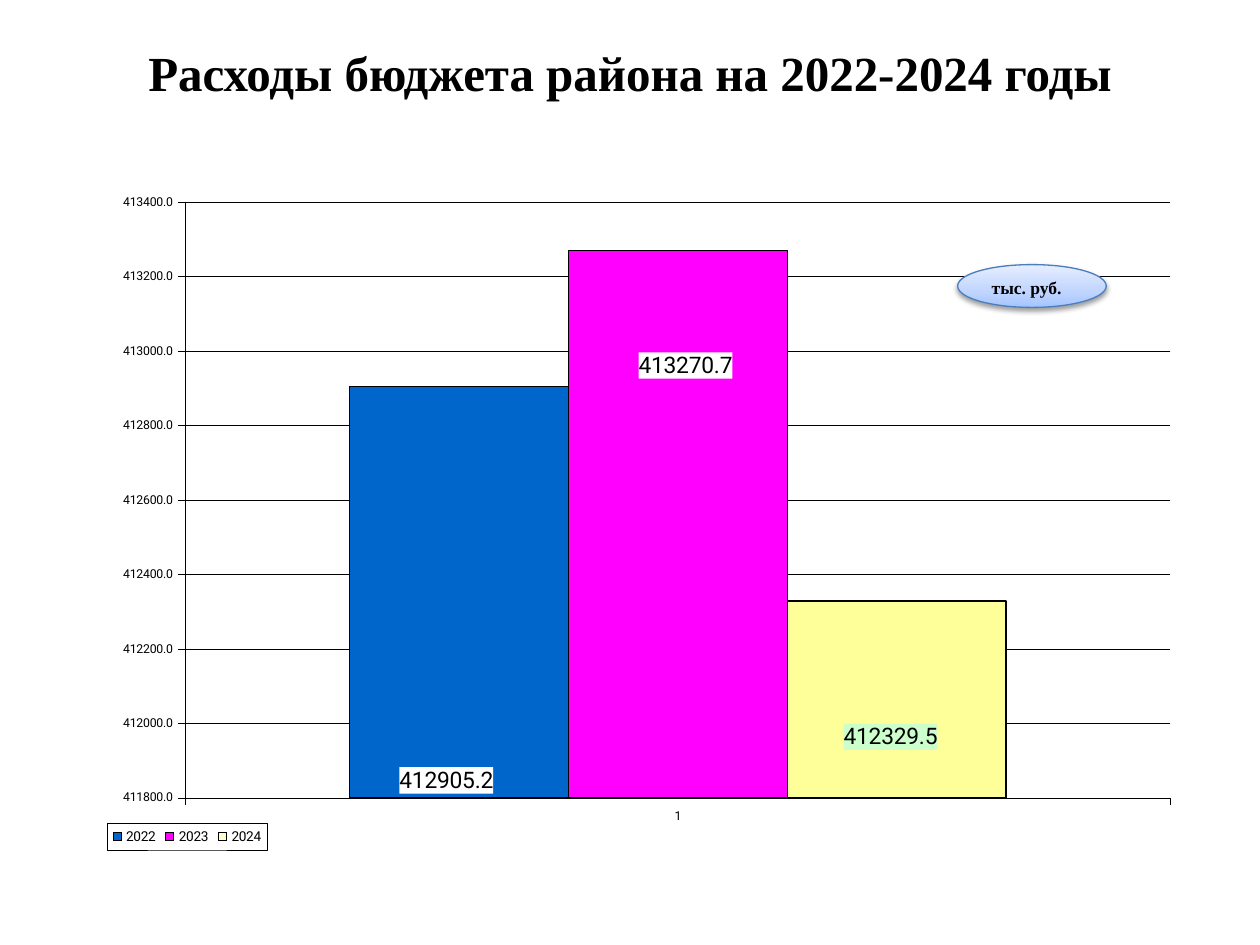
"""Build the slide showing district budget spending for 2022-2024."""
from pptx import Presentation
from pptx.chart.data import CategoryChartData
from pptx.dml.color import RGBColor
from pptx.enum.chart import XL_CHART_TYPE as Chart, XL_LEGEND_POSITION as Legend
from pptx.enum.chart import XL_LABEL_POSITION as Label, XL_TICK_MARK as Tick
from pptx.enum.shapes import MSO_SHAPE as Shape
from pptx.enum.text import MSO_ANCHOR as Anchor, PP_ALIGN as Align
from pptx.oxml import parse_xml
from pptx.oxml.ns import nsdecls, qn
from pptx.util import Inches, Pt

TITLE = "Расходы бюджета района на 2022-2024 годы"
UNIT = "тыс. руб."
CATEGORY = "1"
NUMBER_FORMAT = "0.0"
SERIES = [
    {"name": "2022", "value": 412905.2, "key": "blue", "bar": "blue",
     "label": "white", "shift": (-1, 43.6)},
    {"name": "2023", "value": 413270.7, "key": "pink", "bar": "pink",
     "label": "white", "shift": (0.6, 14.1)},
    {"name": "2024", "value": 412329.5, "key": "pale", "bar": "yellow",
     "label": "mint", "shift": (-0.5, 16.3)},
]
SCALE = {"minimum_scale": 411800, "maximum_scale": 413400, "major_unit": 200}

COLORS = {"black": "000000", "white": "FFFFFF", "blue": "0066CC", "pink": "FF00FF",
          "pale": "FFFFCC", "yellow": "FFFF99", "mint": "CCFFCC", "edge": "4B7EBC",
          "low": "A4C4FF", "middle": "BFD4FF", "high": "E6EEFF"}
BADGE_STOPS = {0: "low", 35: "middle", 100: "high"}
SERIF, SANS = "Times New Roman", "Roboto"
SIZES = {"title": 28, "badge": 10, "axis": 7, "legend": 7.8, "label": 13}
LINES = {"axis": 0.21, "bar": 0.85, "badge": 0.75}

SLIDE = (10, 7.5)
AREAS = {"title": (5, 4, 90, 7.33), "chart": (8, 19.2, 86.5, 73),
         "plot": (14.7, 21.4, 78.2, 63.05), "legend": (8.5, 87.1, 12.7, 2.85),
         "badge": (76, 28, 11.8, 4.53)}


def on_slide(name):
    """Turn an area in percent of the slide into lengths."""
    return [Inches(share / 100 * side) for share, side in zip(AREAS[name], SLIDE * 2)]


def in_chart(name):
    """Turn an area in percent of the slide into shares of the chart."""
    left, top, width, height = AREAS["chart"]
    x, y, w, h = AREAS[name]
    return (x - left) / width, (y - top) / height, w / width, h / height


def xml(tag, body="", attrs=""):
    return parse_xml(f"<{tag} {nsdecls('a', 'c')} {attrs}>{body}</{tag}>")


def solid(color):
    return f'<a:solidFill><a:srgbClr val="{COLORS[color]}"/></a:solidFill>'


def layout(values, modes=()):
    tags = [*modes, *zip("xywh", values)]
    body = "".join(f'<c:{tag} val="{value}"/>' for tag, value in tags)
    return xml("c:layout", f"<c:manualLayout>{body}</c:manualLayout>")


def place(owner, name, modes=()):
    """Replace the layout of a plot area or legend with a fixed one."""
    for old in owner.findall(qn("c:layout")):
        owner.remove(old)
    edges = [("xMode", "edge"), ("yMode", "edge")]
    position = 1 if owner.find(qn("c:legendPos")) is not None else 0
    owner.insert(position, layout(in_chart(name), [*modes, *edges]))


def set_font(font, kind, face=SANS, bold=False):
    font.size, font.name, font.bold = Pt(SIZES[kind]), face, bold
    font.color.rgb = RGBColor.from_string(COLORS["black"])


def set_line(line, kind, color="black"):
    line.color.rgb = RGBColor.from_string(COLORS[color])
    line.width = Pt(LINES[kind])


def paint_bar(fmt, color):
    fmt.fill.solid()
    fmt.fill.fore_color.rgb = RGBColor.from_string(COLORS[color])
    set_line(fmt.line, "bar")


def write(sp, text, kind, align, anchor):
    tf = sp.text_frame
    tf.word_wrap, tf.vertical_anchor = True, anchor
    p = tf.paragraphs[0]
    p.text, p.alignment = text, align
    set_font(p.font, kind, SERIF, True)


def style_label(ser, color, shift):
    """Fill the value label, move it off its bar's top and drop its leader line."""
    labels, label = ser.data_labels, ser.points[0].data_label
    labels.show_value = True
    labels.number_format, labels.number_format_is_linked = NUMBER_FORMAT, False
    for item in (labels, label):
        set_font(item.font, "label")
        item.position = Label.OUTSIDE_END

    dlbls = ser._element.find(qn("c:dLbls"))
    for old in dlbls.findall(qn("c:showLeaderLines")):
        dlbls.remove(old)
    dlbls.append(xml("c:showLeaderLines", attrs='val="0"'))

    dlbl = dlbls.find(qn("c:dLbl"))
    offsets = [move / side for move, side in zip(shift, AREAS["chart"][2:])]
    number = f'formatCode="{NUMBER_FORMAT}" sourceLinked="0"'
    for part in (layout(offsets), xml("c:numFmt", attrs=number), xml("c:spPr", solid(color))):
        dlbl.find(qn("c:txPr")).addprevious(part)


def style_axes(chart):
    for axis in (chart.category_axis, chart.value_axis):
        axis.major_tick_mark, axis.minor_tick_mark = Tick.OUTSIDE, Tick.NONE
        set_font(axis.tick_labels.font, "axis")
        set_line(axis.format.line, "axis")
    values = chart.value_axis
    for name, value in SCALE.items():
        setattr(values, name, value)
    ticks = values.tick_labels
    ticks.number_format, ticks.number_format_is_linked = NUMBER_FORMAT, False
    set_line(values.major_gridlines.format.line, "axis")


def style_legend(chart):
    chart.has_legend = True
    legend = chart.legend
    legend.position, legend.include_in_layout = Legend.BOTTOM, False
    set_font(legend.font, "legend")
    place(legend._element, "legend")
    border = f'<a:ln w="{Pt(LINES["axis"])}">{solid("black")}</a:ln>'
    legend._element.find(qn("c:txPr")).addprevious(xml("c:spPr", solid("white") + border))


def add_budget_chart(s):
    data = CategoryChartData(number_format=NUMBER_FORMAT)
    data.categories = [CATEGORY]
    for row in SERIES:
        data.add_series(row["name"], [row["value"]])
    chart = s.shapes.add_chart(Chart.COLUMN_CLUSTERED, *on_slide("chart"), data).chart
    chart.has_title = False
    set_font(chart.font, "axis")

    plot = chart.plots[0]
    plot.gap_width, plot.overlap, plot.vary_by_categories = 150, 0, False
    for ser, row in zip(plot.series, SERIES):
        paint_bar(ser.format, row["key"])
        if row["bar"] != row["key"]:
            paint_bar(ser.points[0].format, row["bar"])
        style_label(ser, row["label"], row["shift"])

    style_axes(chart)
    style_legend(chart)
    place(chart._chartSpace.chart.plotArea, "plot", [("layoutTarget", "inner")])


def add_title(s):
    sp = s.shapes.add_textbox(*on_slide("title"))
    write(sp, TITLE, "title", Align.CENTER, Anchor.MIDDLE)


def add_unit_badge(s):
    sp = s.shapes.add_shape(Shape.OVAL, *on_slide("badge"))
    set_line(sp.line, "badge", "edge")
    write(sp, UNIT, "badge", Align.LEFT, Anchor.TOP)
    stops = "".join(f'<a:gs pos="{pos * 1000}"><a:srgbClr val="{COLORS[color]}"/></a:gs>'
                    for pos, color in BADGE_STOPS.items())
    shadow = (f'<a:outerShdw blurRad="{Pt(3.1)}" dist="{Pt(1.6)}" dir="5400000" rotWithShape="0">'
              f'<a:srgbClr val="{COLORS["black"]}"><a:alpha val="38000"/></a:srgbClr>'
              '</a:outerShdw>')
    ln = sp._element.spPr.find(qn("a:ln"))
    ln.addprevious(xml("a:gradFill", f'<a:gsLst>{stops}</a:gsLst><a:lin ang="16200000"/>'))
    ln.addnext(xml("a:effectLst", shadow))


def main():
    prs = Presentation()
    prs.slide_width, prs.slide_height = map(Inches, SLIDE)
    s = prs.slides.add_slide(prs.slide_layouts[6])
    for add_part in (add_budget_chart, add_title, add_unit_badge):
        add_part(s)
    prs.save("out.pptx")


if __name__ == "__main__":
    main()
